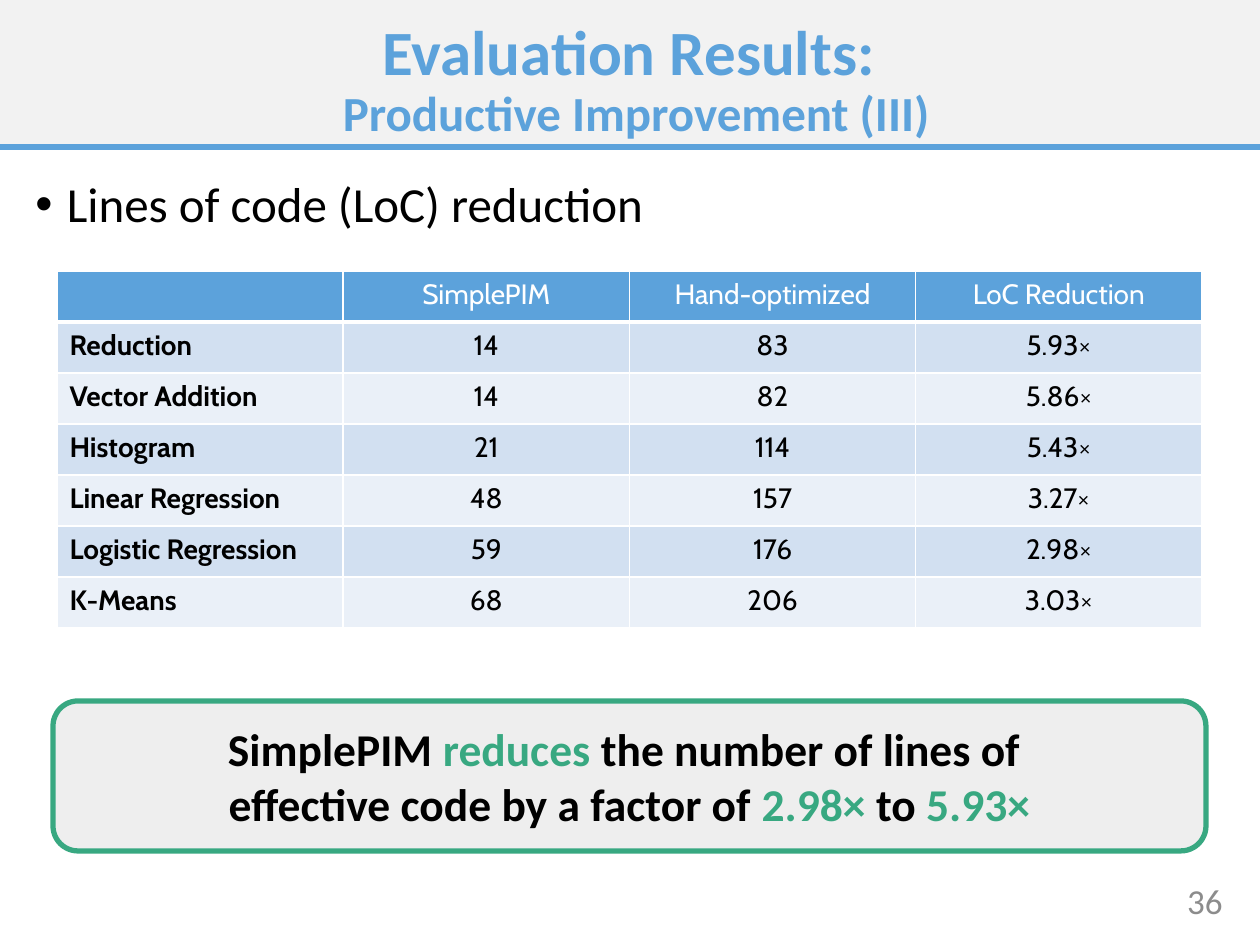
from pptx import Presentation
from pptx import util as u
from pptx.dml.color import RGBColor
from pptx.enum import shapes, text
from pptx.oxml.ns import qn
from lxml import etree

SCALE = u.Inches(1) / 126
BLUE = RGBColor(0x5C, 0xA2, 0xDB)
GREEN = RGBColor(0x38, 0xA8, 0x81)
BLACK = RGBColor(0, 0, 0)
WHITE = RGBColor(0xFF, 0xFF, 0xFF)
GRAY = RGBColor(0x8C, 0x8C, 0x8C)
BAND = RGBColor(0xF2, 0xF2, 0xF2)
PANEL = RGBColor(0xEE, 0xEE, 0xEE)
ROW_FILLS = (RGBColor(0xD2, 0xE0, 0xF1), RGBColor(0xEA, 0xF0, 0xF8))

RESULTS = [
    ("", "SimplePIM", "Hand-optimized", "LoC Reduction"),
    ("Reduction", "14", "83", "5.93×"),
    ("Vector Addition", "14", "82", "5.86×"),
    ("Histogram", "21", "114", "5.43×"),
    ("Linear Regression", "48", "157", "3.27×"),
    ("Logistic Regression", "59", "176", "2.98×"),
    ("K-Means", "68", "206", "3.03×"),
]


def px(*lengths):
    return [u.Emu(round(length * SCALE)) for length in lengths]


def add_span(para, words, size, color, bold=False, font="Calibri"):
    span = para.add_run()
    span.text = words
    span.font.name = font
    span.font.size = u.Pt(size)
    span.font.bold = bold
    span.font.color.rgb = color


def add_text_box(page, area, anchor, align):
    box = page.shapes.add_textbox(*px(*area))
    box.text_frame.word_wrap = True
    box.text_frame.vertical_anchor = anchor
    para = box.text_frame.paragraphs[0]
    para.alignment = align
    return para


def add_header(page, left, top, width, height):
    band = page.shapes.add_shape(
        shapes.MSO_SHAPE.RECTANGLE, *px(left, top, width, height))
    band.shadow.inherit = False
    band.fill.solid()
    band.fill.fore_color.rgb = BAND
    band.line.fill.background()

    base = top + height
    rule = page.shapes.add_connector(
        shapes.MSO_CONNECTOR.STRAIGHT, *px(left, base, left + width, base))
    rule.line.color.rgb = BLUE
    rule.line.width = u.Pt(3)
    etree.SubElement(rule._element.spPr, qn("a:effectLst"))

    para = add_text_box(page, (left + 23, top + 18, width - 34, height - 20),
                        text.MSO_ANCHOR.MIDDLE, text.PP_ALIGN.CENTER)
    para.line_spacing = 0.9
    add_span(para, "Evaluation Results: ", 36, BLUE, True)
    para.add_line_break()
    add_span(para, "Productive Improvement (III)", 28, BLUE, True)


def add_bullet_line(page, left, top, width, height):
    para = add_text_box(page, (left, top, width, height),
                        text.MSO_ANCHOR.TOP, text.PP_ALIGN.LEFT)
    para.line_spacing = 0.9
    properties = para._p.get_or_add_pPr()
    properties.set("marL", str(u.Inches(0.25)))
    properties.set("indent", str(-u.Inches(0.25)))
    etree.SubElement(properties, qn("a:buFont"), typeface="Arial")
    etree.SubElement(properties, qn("a:buChar"), char="•")
    add_span(para, "Lines of code (LoC) reduction", 28, BLACK)


def add_borders(cell, bottom_width):
    properties = cell._tc.get_or_add_tcPr()
    for index, side in enumerate(("lnL", "lnR", "lnT", "lnB")):
        width = bottom_width if side == "lnB" else 1
        line = etree.Element(qn("a:" + side), w=str(u.Pt(width)))
        fill = etree.SubElement(line, qn("a:solidFill"))
        etree.SubElement(fill, qn("a:srgbClr"), val=str(WHITE))
        properties.insert(index, line)


def add_results_table(page, left, top, width, height):
    rows, columns = len(RESULTS), len(RESULTS[0])
    table = page.shapes.add_table(
        rows, columns, *px(left, top, width, height)).table
    for row, values in enumerate(RESULTS):
        header = row == 0
        for column, value in enumerate(values):
            cell = table.cell(row, column)
            cell.fill.solid()
            cell.fill.fore_color.rgb = BLUE if header else ROW_FILLS[(row - 1) % 2]
            add_borders(cell, 3 if header else 1)
            label = column == 0
            para = cell.text_frame.paragraphs[0]
            para.alignment = text.PP_ALIGN.LEFT if label else text.PP_ALIGN.CENTER
            if value:
                add_span(para, value, 16, WHITE if header else BLACK, label, "Cabin")


def add_takeaway(page, left, top, width, height):
    box = page.shapes.add_shape(
        shapes.MSO_SHAPE.ROUNDED_RECTANGLE, *px(left, top, width, height))
    box.shadow.inherit = False
    box.fill.solid()
    box.fill.fore_color.rgb = PANEL
    box.line.color.rgb = GREEN
    box.line.width = u.Pt(3)
    box.text_frame.word_wrap = True
    box.text_frame.vertical_anchor = text.MSO_ANCHOR.MIDDLE
    para = box.text_frame.paragraphs[0]
    para.alignment = text.PP_ALIGN.CENTER
    lines = [
        [("SimplePIM ", BLACK), ("reduces", GREEN),
         (" the number of lines of ", BLACK)],
        [("effective code by a factor of ", BLACK), ("2.98× ", GREEN),
         ("to ", BLACK), ("5.93×", GREEN)],
    ]
    for index, pieces in enumerate(lines):
        if index:
            para.add_line_break()
        for words, color in pieces:
            add_span(para, words, 26, color, True)


def add_page_number(page, left, top, width, height):
    para = add_text_box(page, (left, top, width, height),
                        text.MSO_ANCHOR.MIDDLE, text.PP_ALIGN.RIGHT)
    add_span(para, "36", 20, GRAY)


def main():
    deck = Presentation()
    deck.slide_width, deck.slide_height = px(1260, 945)
    page = deck.slides.add_slide(deck.slide_layouts[6])
    add_header(page, 0, 0, 1260, 147)
    add_bullet_line(page, 23, 174, 1201, 70)
    add_results_table(page, 57, 271, 1145, 357)
    add_takeaway(page, 53, 701, 1153, 150)
    add_page_number(page, 1099, 876, 136, 50)
    deck.save("out.pptx")


if __name__ == "__main__":
    main()
